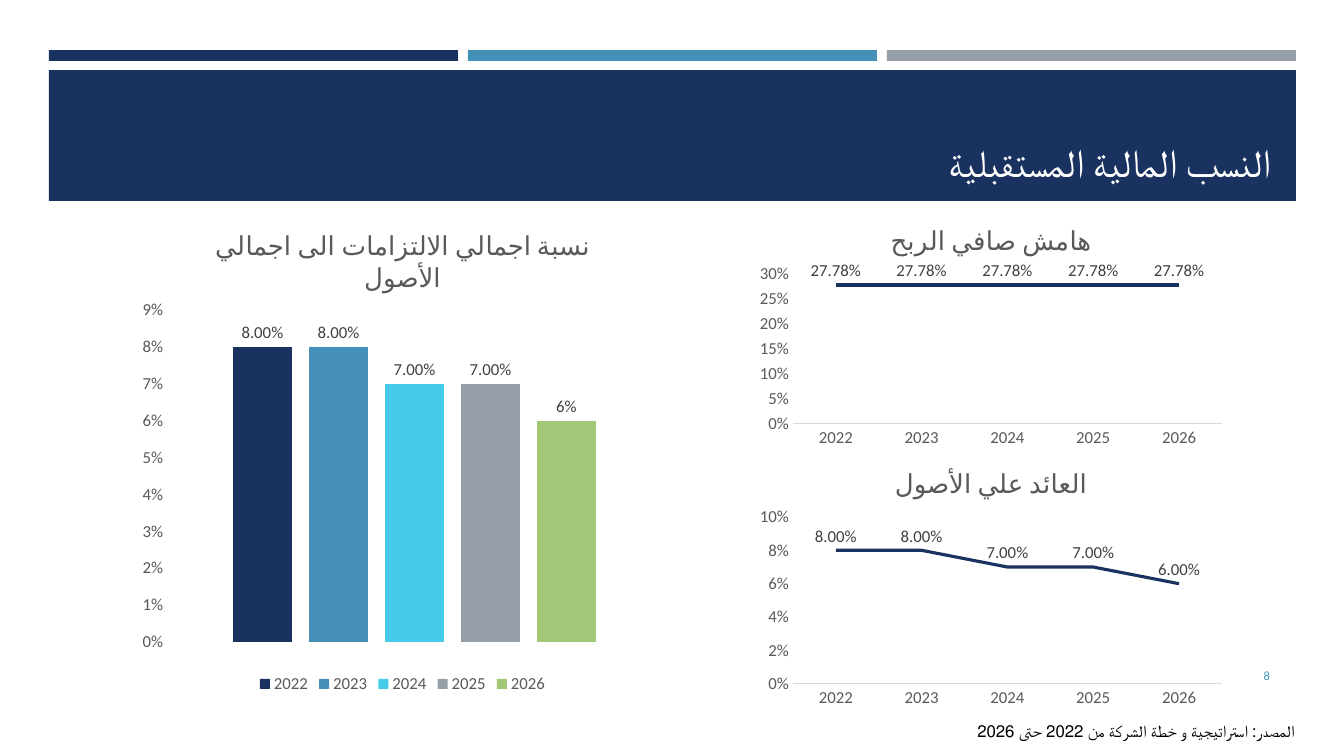
from lxml import etree
from pptx import Presentation
from pptx.chart.data import CategoryChartData
from pptx.dml.color import RGBColor
from pptx.enum.chart import (XL_CHART_TYPE, XL_LABEL_POSITION, XL_LEGEND_POSITION,
                             XL_MARKER_STYLE, XL_TICK_MARK)
from pptx.enum.shapes import MSO_SHAPE
from pptx.enum.text import MSO_ANCHOR, PP_ALIGN
from pptx.oxml import parse_xml
from pptx.oxml.ns import nsdecls, qn
from pptx.util import Pt

COLUMN, LINE = XL_CHART_TYPE.COLUMN_CLUSTERED, XL_CHART_TYPE.LINE
OUTSIDE_END, ABOVE = XL_LABEL_POSITION.OUTSIDE_END, XL_LABEL_POSITION.ABOVE
LEGEND_BOTTOM = XL_LEGEND_POSITION.BOTTOM
NO_MARKER = XL_MARKER_STYLE.NONE
NO_TICK = XL_TICK_MARK.NONE
RECTANGLE = MSO_SHAPE.RECTANGLE
TOP, MIDDLE, BOTTOM = MSO_ANCHOR.TOP, MSO_ANCHOR.MIDDLE, MSO_ANCHOR.BOTTOM
RIGHT = PP_ALIGN.RIGHT

EMU_PER_PX = 6858000 / 756
PAGE_WIDTH, PAGE_HEIGHT = 1344, 756
FONT = "Calibri"
COLORS = {
    "navy": "1A3260", "blue": "4590B8", "cyan": "45CBE8", "gray": "969FA7",
    "green": "A2C777", "white": "FFFFFF", "black": "000000",
    "axis_text": "595959", "label_text": "404040", "axis_line": "D9D9D9",
}
YEARS = ["2022", "2023", "2024", "2025", "2026"]
YEAR_COLORS = ["navy", "blue", "cyan", "gray", "green"]
LIABILITY_RATIOS = [0.08, 0.08, 0.07, 0.07, 0.06]
PROFIT_MARGINS = [0.2778] * 5
ASSET_RETURNS = [0.08, 0.08, 0.07, 0.07, 0.06]


def px(length):
    return round(length * EMU_PER_PX)


def emu_box(box):
    return [px(length) for length in box]


def rgb(color):
    return RGBColor.from_string(COLORS[color])


def style_font(font, size, color):
    font.size = Pt(size)
    font.name = FONT
    font.bold = False
    font.color.rgb = rgb(color)


def set_script_font(span):
    """Give the Arabic letters of a run the deck's font."""
    script = etree.SubElement(span.font._element, qn("a:cs"))
    script.set("typeface", FONT)


def add_text(page, box, text, size, color, anchor=TOP, rtl=False, script_font=False):
    frame = page.shapes.add_textbox(*emu_box(box)).text_frame
    frame.word_wrap = True
    frame.vertical_anchor = anchor
    para = frame.paragraphs[0]
    para.alignment = RIGHT
    if rtl:
        para._p.get_or_add_pPr().set("rtl", "1")
    span = para.add_run()
    span.text = text
    style_font(span.font, size, color)
    if script_font:
        set_script_font(span)


def add_block(page, box, color):
    block = page.shapes.add_shape(RECTANGLE, *emu_box(box))
    block.shadow.inherit = False
    block.fill.solid()
    block.fill.fore_color.rgb = rgb(color)
    block.line.fill.background()


def add_header(page, box):
    left, top, width, height = box
    gap, strip_height, band_offset = 10, 11, 20
    strip_width = (width - 2 * gap) / 3
    for index, color in enumerate(["navy", "blue", "gray"]):
        strip_left = left + index * (strip_width + gap)
        add_block(page, (strip_left, top, strip_width, strip_height), color)
    band_top, band_height = top + band_offset, height - band_offset
    add_block(page, (left, band_top, width, band_height), "navy")
    add_text(page, (left + 16, band_top + 8, width - 31, band_height - 19),
             "النسب المالية المستقبلية", 28, "white",
             anchor=BOTTOM, rtl=True, script_font=True)


def place_plot(chart, box, plot_box):
    """Fix the inner plot area, given in page px, inside the chart's box."""
    left, top, width, height = box
    plot_left, plot_top, plot_width, plot_height = plot_box
    shares = {"x": (plot_left - left) / width, "y": (plot_top - top) / height,
              "w": plot_width / width, "h": plot_height / height}
    values = "".join(f'<c:{key} val="{share:.4f}"/>' for key, share in shares.items())
    layout = parse_xml(
        f'<c:layout {nsdecls("c")}><c:manualLayout><c:layoutTarget val="inner"/>'
        f'<c:xMode val="edge"/><c:yMode val="edge"/>{values}</c:manualLayout></c:layout>')
    plot_area = chart._chartSpace.chart.plotArea
    for old_layout in plot_area.findall(qn("c:layout")):
        plot_area.remove(old_layout)
    plot_area.insert(0, layout)


def add_ratio_chart(page, box, plot_box, kind, data, title, maximum, step):
    """Add a chart with the title and value axis that all three charts share."""
    chart = page.shapes.add_chart(kind, *emu_box(box), data).chart
    style_font(chart.font, 10, "black")
    chart.has_legend = False
    chart.has_title = True
    span = chart.chart_title.text_frame.paragraphs[0].add_run()
    span.text = title
    style_font(span.font, 18.6, "axis_text")
    set_script_font(span)
    chart.chart_title.include_in_layout = False
    chart.plots[0].vary_by_categories = False
    axis = chart.value_axis
    axis.has_major_gridlines = False
    axis.major_tick_mark = axis.minor_tick_mark = NO_TICK
    axis.minimum_scale, axis.maximum_scale, axis.major_unit = 0, maximum, step
    axis.format.line.fill.background()
    axis.tick_labels.number_format = "0%"
    axis.tick_labels.number_format_is_linked = False
    style_font(axis.tick_labels.font, 12, "axis_text")
    place_plot(chart, box, plot_box)
    return chart


def label_series(series, position, number_format="0.00%"):
    labels = series.data_labels
    labels.show_value = True
    labels.position = position
    labels.number_format = number_format
    labels.number_format_is_linked = False
    style_font(labels.font, 12, "label_text")


def add_liability_columns(page, box):
    left, top, width, height = box
    data = CategoryChartData(number_format="0.00%")
    data.categories = ["1"]
    for year, ratio in zip(YEARS, LIABILITY_RATIOS):
        data.add_series(year, [ratio])
    plot_box = (left + 34, top + 103, width - 44, height - 159)
    chart = add_ratio_chart(page, box, plot_box, COLUMN, data,
                            "نسبة اجمالي الالتزامات الى اجمالي الأصول", 0.09, 0.01)
    chart.category_axis.visible = False
    chart.has_legend = True
    chart.legend.position = LEGEND_BOTTOM
    chart.legend.include_in_layout = False
    style_font(chart.legend.font, 12, "axis_text")
    plot = chart.plots[0]
    plot.gap_width, plot.overlap = 219, -27
    for series, color in zip(plot.series, YEAR_COLORS):
        series.format.fill.solid()
        series.format.fill.fore_color.rgb = rgb(color)
        label_series(series, OUTSIDE_END, "0%" if series.name == YEARS[-1] else "0.00%")


def add_yearly_line(page, box, title, values, maximum, step):
    left, top, width, height = box
    data = CategoryChartData(number_format="0.00%")
    data.categories = YEARS
    data.add_series("Series 1", values)
    plot_box = (left + 43, top + 67, width - 53, height - 96)
    chart = add_ratio_chart(page, box, plot_box, LINE, data, title, maximum, step)
    axis = chart.category_axis
    axis.major_tick_mark = axis.minor_tick_mark = NO_TICK
    axis.format.line.color.rgb = rgb("axis_line")
    axis.format.line.width = Pt(0.75)
    style_font(axis.tick_labels.font, 12, "axis_text")
    series = chart.plots[0].series[0]
    series.smooth = False
    series.marker.style = NO_MARKER
    series.format.line.color.rgb = rgb("navy")
    series.format.line.width = Pt(2.25)
    label_series(series, ABOVE)


def main():
    deck = Presentation()
    deck.slide_width, deck.slide_height = px(PAGE_WIDTH), px(PAGE_HEIGHT)
    page = deck.slides.add_slide(deck.slide_layouts[6])
    add_header(page, (49, 50, 1247, 151))
    add_text(page, (823, 716, 482, 30), "المصدر: استراتيجية و خطة الشركة من 2022 حتى 2026",
             12, "black", rtl=True)
    add_liability_columns(page, (133, 207, 539, 491))
    add_yearly_line(page, (750, 207, 482, 246), "هامش صافي الربح", PROFIT_MARGINS, 0.3, 0.05)
    add_yearly_line(page, (750, 450, 482, 263), "العائد علي الأصول", ASSET_RETURNS, 0.1, 0.02)
    add_text(page, (1164, 656, 116, 40), "8", 9, "blue", anchor=MIDDLE)
    deck.save("out.pptx")


if __name__ == "__main__":
    main()
